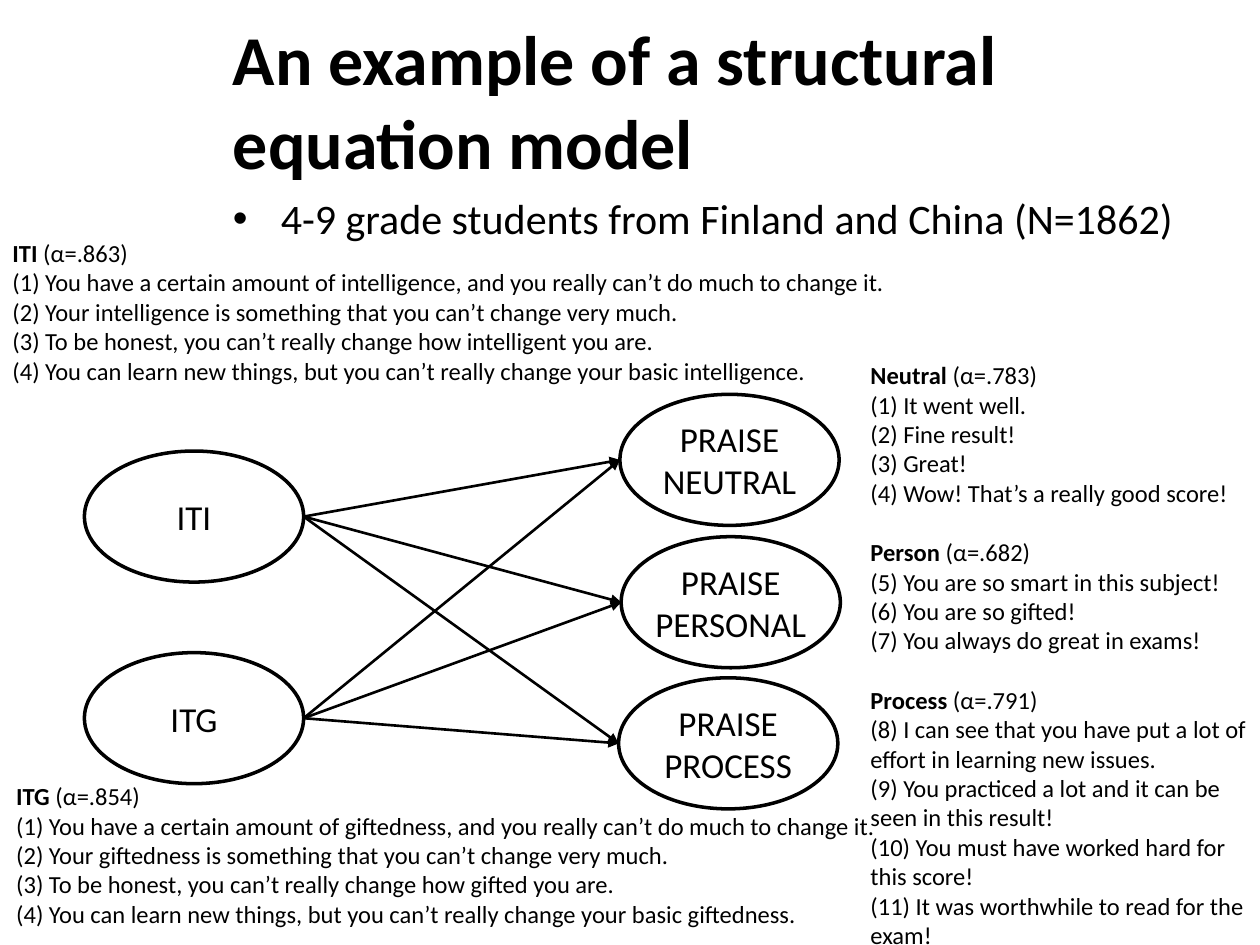
from dataclasses import dataclass
from itertools import product

from lxml.etree import SubElement
from pptx import Presentation
from pptx.dml.color import RGBColor
from pptx.enum.shapes import MSO_CONNECTOR, MSO_SHAPE
from pptx.enum.text import MSO_ANCHOR, MSO_AUTO_SIZE, PP_ALIGN
from pptx.oxml.ns import qn
from pptx.util import Inches, Pt


@dataclass(frozen=True)
class Theme:
    """Colours, font, type sizes and line widths of the slide."""
    ink: RGBColor = RGBColor(0, 0, 0)
    font: str = "Calibri"
    title: int = 40
    subtitle: int = 24
    node: int = 20
    item: int = 14
    group_gap: float = 17.1
    outline: float = 2
    arrow: float = 1.5


THEME = Theme()
NODE_WIDTH, NODE_HEIGHT = 1.74, 1.04

ITI_SCALE = [("ITI", " (α=.863)", [
    "(1) You have a certain amount of intelligence, and you really can’t do much to change it.",
    "(2) Your intelligence is something that you can’t change very much.",
    "(3) To be honest, you can’t really change how intelligent you are.",
    "(4) You can learn new things, but you can’t really change your basic intelligence.",
])]
ITG_SCALE = [("ITG", " (α=.854)", [
    "(1) You have a certain amount of giftedness, and you really can’t do much to change it.",
    "(2) Your giftedness is something that you can’t change very much.",
    "(3) To be honest, you can’t really change how gifted you are.",
    "(4) You can learn new things, but you can’t really change your basic giftedness.",
])]
PRAISE_SCALES = [
    ("Neutral", " (α=.783)", [
        "(1) It went well.",
        "(2) Fine result!",
        "(3) Great!",
        "(4) Wow! That’s a really good score!",
    ]),
    ("Person", " (α=.682)", [
        "(5) You are so smart in this subject!",
        "(6) You are so gifted!",
        "(7) You always do great in exams!",
    ]),
    ("Process", " (α=.791)", [
        "(8) I can see that you have put a lot of effort in learning new issues.",
        "(9) You practiced a lot and it can be seen in this result!",
        "(10) You must have worked hard for this score!",
        "(11) It was worthwhile to read for the exam!",
    ]),
]
PREDICTORS = [("ITI", 0.67, 3.58), ("ITG", 0.67, 5.18)]
OUTCOMES = [
    ("PRAISE\nNEUTRAL", 4.92, 3.13),
    ("PRAISE\nPERSONAL", 4.93, 4.26),
    ("PRAISE\nPROCESS", 4.91, 5.38),
]


def add_span(para, text, size, bold=False):
    """Append one styled run to a paragraph."""
    span = para.add_run()
    span.text = text
    span.font.name = THEME.font
    span.font.size = Pt(size)
    span.font.bold = bold
    span.font.color.rgb = THEME.ink


def add_text_box(page, box, wrap=True):
    """Add a growing text box and return its text frame."""
    frame = page.shapes.add_textbox(*map(Inches, box)).text_frame
    frame.word_wrap = wrap
    frame.auto_size = MSO_AUTO_SIZE.SHAPE_TO_FIT_TEXT
    return frame


def add_title(page, box):
    """Place the slide title."""
    para = add_text_box(page, box).paragraphs[0]
    add_span(para, "An example of a structural equation model", THEME.title, bold=True)


def add_sample(page, box):
    """Place the bulleted line about the sample."""
    para = add_text_box(page, box, wrap=False).paragraphs[0]
    properties = para._p.get_or_add_pPr()
    properties.set("marL", str(Inches(0.38)))
    properties.set("indent", str(-Inches(0.38)))
    SubElement(properties, qn("a:buFont")).set("typeface", "Arial")
    SubElement(properties, qn("a:buChar")).set("char", "•")
    add_span(para, "4-9 grade students from Finland and China (N=1862)", THEME.subtitle)


def add_scales(page, box, scales):
    """List scales, each a bold name with its reliability above its items."""
    frame = add_text_box(page, box)
    for index, (name, reliability, items) in enumerate(scales):
        para = frame.add_paragraph() if index else frame.paragraphs[0]
        if index:
            para.space_before = Pt(THEME.group_gap)
        add_span(para, name, THEME.item, bold=True)
        add_span(para, reliability, THEME.item)
        for item in items:
            add_span(frame.add_paragraph(), item, THEME.item)


def add_node(page, label, left, top):
    """Draw one latent variable as a labelled ellipse."""
    box = (left, top, NODE_WIDTH, NODE_HEIGHT)
    node = page.shapes.add_shape(MSO_SHAPE.OVAL, *map(Inches, box))
    node.shadow.inherit = False
    node.fill.background()
    node.line.color.rgb = THEME.ink
    node.line.width = Pt(THEME.outline)
    frame = node.text_frame
    frame.word_wrap = True
    frame.vertical_anchor = MSO_ANCHOR.MIDDLE
    frame.margin_left = frame.margin_right = frame.margin_top = frame.margin_bottom = 0
    para = frame.paragraphs[0]
    para.alignment = PP_ALIGN.CENTER
    for index, line in enumerate(label.split("\n")):
        if index:
            para.add_line_break()
        add_span(para, line, THEME.node)
    return node


def add_arrow(page, source, target):
    """Draw an arrow from the right of one node to the left of another."""
    arrow = page.shapes.add_connector(
        MSO_CONNECTOR.STRAIGHT,
        source.left + source.width, source.top + source.height // 2,
        target.left, target.top + target.height // 2)
    arrow.line.color.rgb = THEME.ink
    arrow.line.width = Pt(THEME.arrow)
    SubElement(arrow.line._get_or_add_ln(), qn("a:tailEnd")).set("type", "triangle")
    SubElement(arrow._element.spPr, qn("a:effectLst"))


def add_path_model(page):
    """Draw the predictors, the outcomes and every path between them."""
    predictors = [add_node(page, *node) for node in PREDICTORS]
    outcomes = [add_node(page, *node) for node in OUTCOMES]
    for source, target in product(predictors, outcomes):
        add_arrow(page, source, target)


def main():
    """Build the slide and save the deck."""
    deck = Presentation()
    deck.slide_width, deck.slide_height = Inches(10), Inches(7.5)
    page = deck.slides.add_slide(deck.slide_layouts[6])
    add_title(page, (1.75, 0.07, 8.05, 1.45))
    add_path_model(page)
    add_sample(page, (1.75, 1.48, 7.72, 0.5))
    add_scales(page, (6.81, 2.81, 3.19, 4.81), PRAISE_SCALES)
    add_scales(page, (0, 1.84, 8.15, 1.28), ITI_SCALE)
    add_scales(page, (0.03, 6.15, 7.18, 1.28), ITG_SCALE)
    deck.save("out.pptx")


if __name__ == "__main__":
    main()
